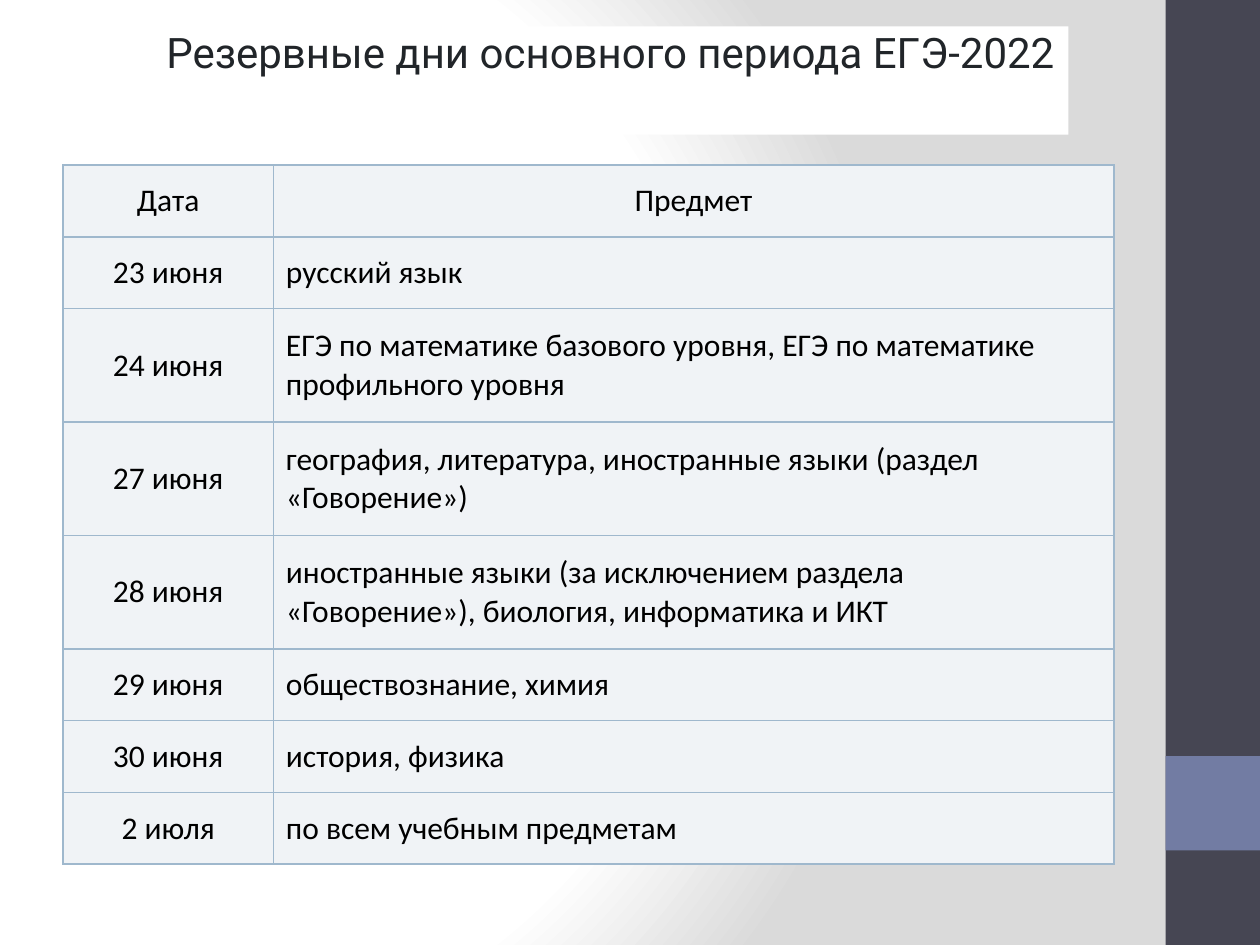
from lxml import etree
from pptx import Presentation
from pptx import oxml
from pptx import util as u
from pptx.dml.color import RGBColor
from pptx.enum import shapes, text
from pptx.oxml import ns

COLORS = {
    "white": "FFFFFF",
    "grey": "DADADA",
    "side": "464653",
    "accent": "727CA3",
    "cell": "F0F3F6",
    "border": "9FB8CD",
    "title": "212529",
    "body": "000000",
}

SCHEDULE = [
    ("Дата", "Предмет"),
    ("23 июня", "русский язык"),
    ("24 июня", "ЕГЭ по математике базового уровня, "
                "ЕГЭ по математике профильного уровня"),
    ("27 июня", "география, литература, иностранные языки "
                "(раздел «Говорение»)"),
    ("28 июня", "иностранные языки (за исключением раздела «Говорение»), "
                "биология, информатика и ИКТ"),
    ("29 июня", "обществознание, химия"),
    ("30 июня", "история, физика"),
    ("2 июля", "по всем учебным предметам"),
]
COLUMN_WIDTHS = (1.67, 6.67)
ROW_HEIGHT, TALL_ROW_HEIGHT = 0.57, 0.9
TALL_ROWS = (2, 3, 4)


def color(name):
    return RGBColor.from_string(COLORS[name])


def paint(fill, name):
    fill.solid()
    fill.fore_color.rgb = color(name)


def set_background(slide):
    """Fill the background with a radial gradient from white to grey."""
    slide.background.fill.gradient()
    linear = slide.element.find(".//" + ns.qn("a:gradFill"))
    stops = "".join(
        f'<a:gs pos="{position}000"><a:srgbClr val="{COLORS[name]}"/></a:gs>'
        for position, name in ((0, "white"), (75, "white"), (100, "grey")))
    radial = oxml.parse_xml(
        f'<a:gradFill {ns.nsdecls("a")} rotWithShape="1">'
        f'<a:gsLst>{stops}</a:gsLst><a:path path="circle">'
        '<a:fillToRect l="20000" t="50000" r="100000" b="50000"/>'
        '</a:path></a:gradFill>')
    linear.getparent().replace(linear, radial)


def add_band(slide, top, height, name):
    band = slide.shapes.add_shape(
        shapes.MSO_SHAPE.RECTANGLE,
        u.Inches(9.25), u.Inches(top), u.Inches(0.75), u.Inches(height))
    band.shadow.inherit = False
    paint(band.fill, name)
    band.line.fill.background()


def write(para, words, size, font, name, align):
    para.alignment = align
    span = para.add_run()
    span.text = words
    span.font.size = u.Pt(size)
    span.font.name = font
    span.font.color.rgb = color(name)


def set_title(slide, words):
    title = slide.shapes.title
    title.left, title.top = u.Inches(1.22), u.Inches(0.21)
    title.width, title.height = u.Inches(7.26), u.Inches(0.86)
    paint(title.fill, "white")
    frame = title.text_frame
    frame.word_wrap = False
    frame.auto_size = text.MSO_AUTO_SIZE.NONE
    frame.vertical_anchor = text.MSO_ANCHOR.TOP
    frame.margin_left = frame.margin_right = u.Inches(0.1)
    frame.margin_top, frame.margin_bottom = 0, u.Inches(0.05)
    write(frame.paragraphs[0], words, 24, "Roboto", "title", text.PP_ALIGN.LEFT)


def set_borders(cell):
    properties = cell._tc.get_or_add_tcPr()
    for index, side in enumerate(("lnL", "lnR", "lnT", "lnB")):
        line = etree.Element(ns.qn("a:" + side), w=str(u.Pt(1)))
        fill = etree.SubElement(line, ns.qn("a:solidFill"))
        etree.SubElement(fill, ns.qn("a:srgbClr"), val=COLORS["border"])
        properties.insert(index, line)


def fill_cell(cell, words, align):
    paint(cell.fill, "cell")
    set_borders(cell)
    cell.vertical_anchor = text.MSO_ANCHOR.MIDDLE
    cell.margin_left = cell.margin_right = u.Inches(0.1)
    cell.margin_top = cell.margin_bottom = u.Inches(0.1)
    write(cell.text_frame.paragraphs[0], words, 18, "Calibri", "body", align)


def add_schedule(slide):
    heights = [TALL_ROW_HEIGHT if index in TALL_ROWS else ROW_HEIGHT
               for index in range(len(SCHEDULE))]
    table = slide.shapes.add_table(
        len(SCHEDULE), len(COLUMN_WIDTHS), u.Inches(0.5), u.Inches(1.31),
        u.Inches(sum(COLUMN_WIDTHS)), u.Inches(sum(heights))).table
    for column, width in zip(table.columns, COLUMN_WIDTHS):
        column.width = u.Inches(width)
    for row_index, entry in enumerate(SCHEDULE):
        table.rows[row_index].height = u.Inches(heights[row_index])
        for column_index, words in enumerate(entry):
            centred = row_index == 0 or column_index == 0
            align = text.PP_ALIGN.CENTER if centred else text.PP_ALIGN.LEFT
            fill_cell(table.cell(row_index, column_index), words, align)


def main():
    deck = Presentation()
    deck.slide_width, deck.slide_height = u.Inches(10), u.Inches(7.5)
    page = deck.slides.add_slide(deck.slide_layouts[5])
    set_background(page)
    add_band(page, 0, 7.5, "side")
    add_band(page, 6, 0.75, "accent")
    set_title(page, "Резервные дни основного периода ЕГЭ-2022")
    add_schedule(page)
    deck.save("out.pptx")


if __name__ == "__main__":
    main()
